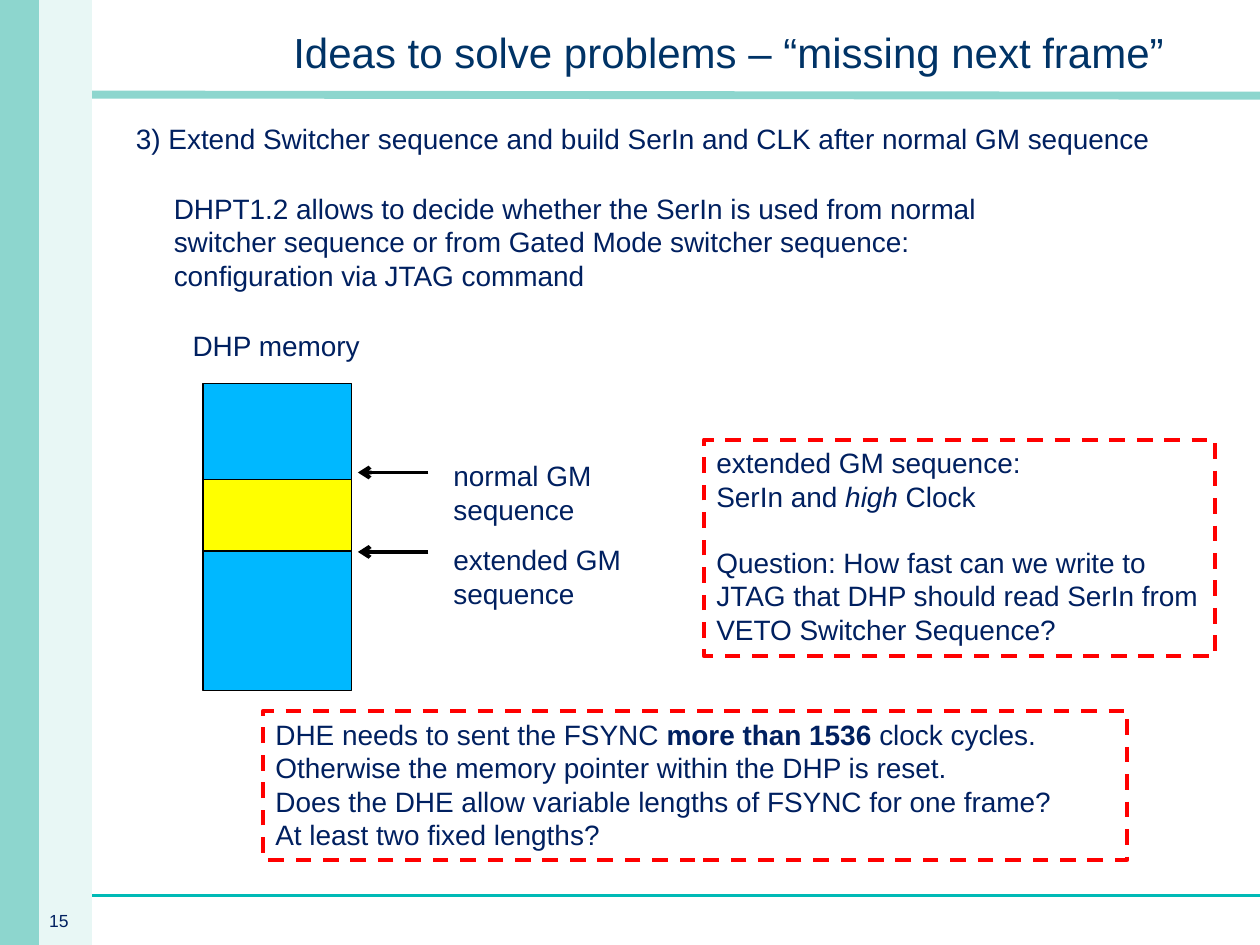
import pptx
import pptx.dml.color
import pptx.enum.dml
import pptx.enum.shapes
import pptx.enum.text
import pptx.oxml
import pptx.oxml.ns
import pptx.util

Pt = pptx.util.Pt
RGBColor = pptx.dml.color.RGBColor
MSO_ANCHOR = pptx.enum.text.MSO_ANCHOR
PP_ALIGN = pptx.enum.text.PP_ALIGN

NAVY = RGBColor(0x00, 0x20, 0x60)
TITLE_BLUE = RGBColor(0x00, 0x33, 0x66)
MINT = RGBColor(0x8D, 0xD6, 0xCE)
PALE_MINT = RGBColor(0xE8, 0xF7, 0xF5)
TEAL = RGBColor(0x00, 0xBA, 0xB6)
SKY = RGBColor(0x00, 0xB8, 0xFF)
YELLOW = RGBColor(0xFF, 0xFF, 0x00)
RED = RGBColor(0xFF, 0x00, 0x00)
BLACK = RGBColor(0x00, 0x00, 0x00)

BLANK_LINE = 18.4  # height of one line of 16 pt Arial


class SlideBuilder:
    font_name = "Arial"
    font_size = 16

    def __init__(self, slide):
        self.slide = slide

    def style(self, p, size=font_size, color=NAVY, spacing=None, align=PP_ALIGN.LEFT):
        p.alignment = align
        p.font.name = self.font_name
        p.font.size = Pt(size)
        p.font.color.rgb = color
        if spacing:
            p.line_spacing = spacing

    def title(self, text, x, y, w, h):
        sp = self.slide.shapes.title
        sp.left, sp.top, sp.width, sp.height = Pt(x), Pt(y), Pt(w), Pt(h)
        tf = sp.text_frame
        tf.text = text
        tf.auto_size = pptx.enum.text.MSO_AUTO_SIZE.NONE
        tf.vertical_anchor = MSO_ANCHOR.MIDDLE
        self.style(tf.paragraphs[0], 24, TITLE_BLUE, 1.1, PP_ALIGN.CENTER)

    def text(self, text, x, y, w, h, wrap=True, **style):
        tf = self.slide.shapes.add_textbox(Pt(x), Pt(y), Pt(w), Pt(h)).text_frame
        tf.word_wrap = wrap
        tf.text = text
        self.style(tf.paragraphs[0], **style)

    def rect(self, x, y, w, h, fill=None, line=None, width=0.75):
        sp = self.slide.shapes.add_shape(
            pptx.enum.shapes.MSO_SHAPE.RECTANGLE, Pt(x), Pt(y), Pt(w), Pt(h))
        sp.shadow.inherit = False
        if fill is None:
            sp.fill.background()
        else:
            sp.fill.solid()
            sp.fill.fore_color.rgb = fill
        if line is None:
            sp.line.fill.background()
        else:
            sp.line.color.rgb = line
            sp.line.width = Pt(width)
        return sp

    def note(self, paragraphs, x, y, w, h):
        """Dashed box; each paragraph is (space before, [(text, emphasis), ...])."""
        sp = self.rect(x, y, w, h, line=RED, width=2.25)
        sp.line.dash_style = pptx.enum.dml.MSO_LINE.DASH
        tf = sp.text_frame
        tf.word_wrap = True
        tf.vertical_anchor = MSO_ANCHOR.TOP
        for i, (before, runs) in enumerate(paragraphs):
            p = tf.add_paragraph() if i else tf.paragraphs[0]
            if before:
                p.space_before = Pt(before)
            self.style(p)
            for text, emphasis in runs:
                r = p.add_run()
                r.text = text
                if emphasis == "bold":
                    r.font.bold = True
                elif emphasis == "italic":
                    r.font.italic = True

    def line(self, x1, y1, x2, y2, color, width, arrow=False):
        cx = self.slide.shapes.add_connector(
            pptx.enum.shapes.MSO_CONNECTOR.STRAIGHT, Pt(x1), Pt(y1), Pt(x2), Pt(y2))
        cx.line.color.rgb = color
        cx.line.width = Pt(width)
        if arrow:
            ln = cx.line._get_or_add_ln()
            ln.append(pptx.oxml.parse_xml(
                '<a:tailEnd %s type="arrow"/>' % pptx.oxml.ns.nsdecls("a")))
        cx._element.spPr.append(pptx.oxml.parse_xml(
            "<a:effectLst %s/>" % pptx.oxml.ns.nsdecls("a")))


def main():
    prs = pptx.Presentation()
    prs.slide_width, prs.slide_height = Pt(720), Pt(540)
    s = SlideBuilder(prs.slides.add_slide(prs.slide_layouts[5]))

    # Frame: rules, side bands and page number
    s.line(0, 54, 720, 54.7, MINT, 4.5)
    s.line(52.6, 511.9, 720, 511.9, TEAL, 1.5)
    s.rect(21.6, 0, 31, 540, PALE_MINT)
    s.rect(0, 0, 22.3, 540, MINT)
    s.text("15", 21, 519, 34.5, 17.3, wrap=False, size=10, spacing=0.8)

    # Title and explanation
    s.title("Ideas to solve problems – “missing next frame”", 127.4, 9.4, 578, 37.4)
    s.text("3) Extend Switcher sequence and build SerIn and CLK after normal GM sequence",
           70.6, 66.2, 623.5, 26.6)
    s.text("DHPT1.2 allows to decide whether the SerIn is used from normal switcher "
           "sequence or from Gated Mode switcher sequence: configuration via JTAG command",
           92.2, 105.8, 525, 65.5)

    # Memory block with the gated mode section
    s.text("DHP memory", 103, 188, 111, 23, wrap=False, spacing=0.8)
    s.rect(116, 219, 85, 175.7, SKY, BLACK)
    s.rect(116, 274, 85, 41, YELLOW, BLACK)

    # Pointers into the memory
    for label, arrow_y, label_y, label_w in (
            ("normal GM sequence", 270, 258.5, 96.5),
            ("extended GM sequence", 315.4, 306.7, 118.8)):
        s.line(244.8, arrow_y, 204.5, arrow_y, BLACK, 2.25, arrow=True)
        s.text(label, 252, label_y, label_w, 46)

    # Open questions
    s.note([
        (0, [("extended GM sequence:", None)]),
        (0, [("SerIn and ", None), ("high", "italic"), (" Clock", None)]),
        (BLANK_LINE, [("Question: How fast can we write to JTAG that DHP should read "
                       "SerIn from VETO Switcher Sequence?", None)]),
    ], 402.3, 251.2, 292.3, 123.8)
    s.note([
        (0, [("DHE needs to sent the FSYNC ", None), ("more than 1536 ", "bold"),
             ("clock cycles. Otherwise the memory pointer within the DHP is reset.", None)]),
        (0, [("Does the DHE allow variable lengths of FSYNC for one frame?", None)]),
        (0, [("At least two fixed lengths?", None)]),
    ], 150.3, 406.2, 494, 85)

    prs.save("out.pptx")


if __name__ == "__main__":
    main()
